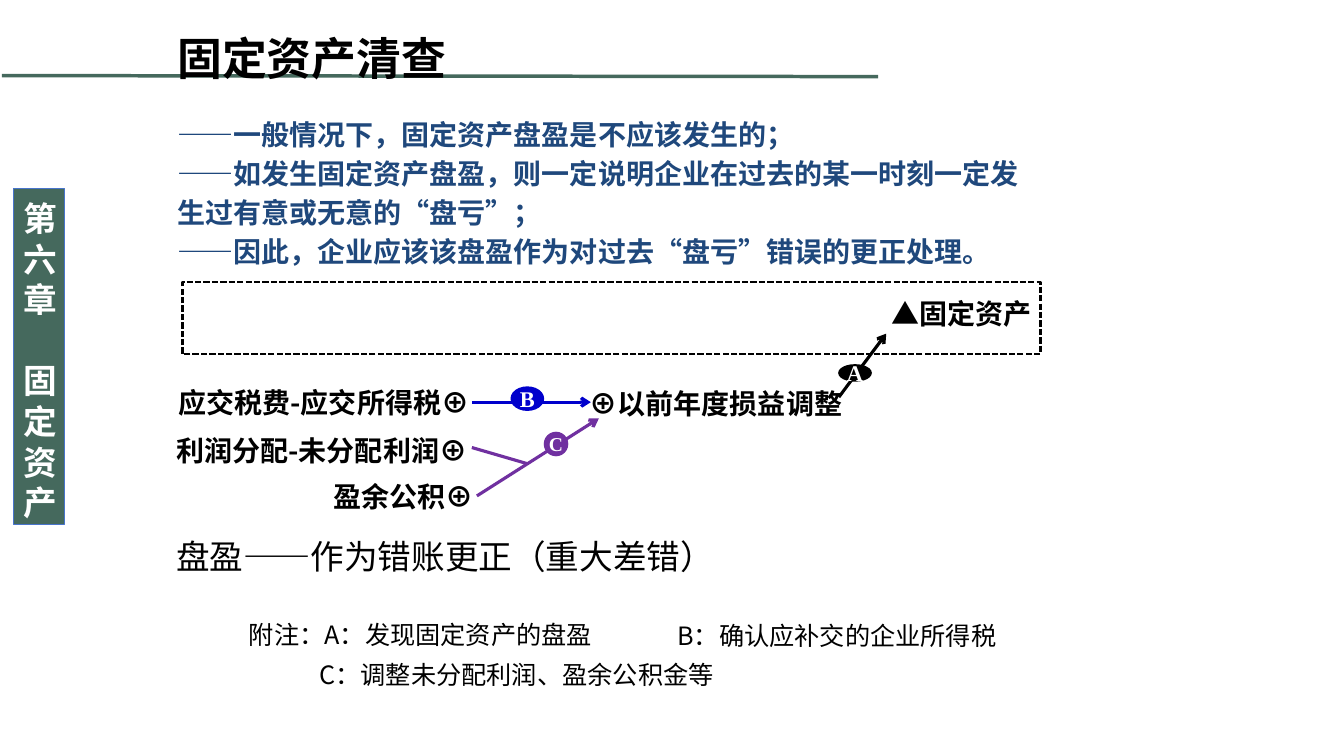
from dataclasses import dataclass

from lxml import etree
from pptx import Presentation
from pptx.dml.color import RGBColor
from pptx.enum.dml import MSO_LINE
from pptx.enum.shapes import MSO_CONNECTOR, MSO_SHAPE
from pptx.enum.text import MSO_ANCHOR, PP_ALIGN
from pptx.oxml.ns import qn
from pptx.util import Inches, Pt

STRAIGHT = MSO_CONNECTOR.STRAIGHT
RECTANGLE = MSO_SHAPE.RECTANGLE
PARALLELOGRAM = MSO_SHAPE.PARALLELOGRAM
BADGE = MSO_SHAPE.FLOWCHART_CONNECTOR
DASHED = MSO_LINE.SQUARE_DOT
MIDDLE = MSO_ANCHOR.MIDDLE
CENTER = PP_ALIGN.CENTER


@dataclass(frozen=True)
class Theme:
    black: str = "000000"
    white: str = "FFFFFF"
    green: str = "45695D"
    edge: str = "4874CB"
    navy: str = "1F487C"
    blue: str = "0000CC"
    purple: str = "7030A0"
    cjk: str = "Noto Sans CJK SC"
    serif: str = "Times New Roman"
    title: int = 32
    heading: int = 24
    account: int = 20
    note: int = 18
    badge: int = 16
    small_badge: int = 14
    leading: float = 1.27


THEME = Theme()


@dataclass(frozen=True)
class Text:
    lines: tuple[str, ...]
    left: float
    top: float
    width: float
    height: float
    size: int = THEME.account
    bold: bool = True
    color: str = THEME.black
    leading: float = THEME.leading


@dataclass(frozen=True)
class Line:
    start: tuple[float, float]
    end: tuple[float, float]
    color: str
    weight: float = 2.25
    arrow: bool = True


@dataclass(frozen=True)
class Badge:
    letter: str
    left: float
    top: float
    width: float
    height: float
    color: str
    size: int = THEME.badge


RULE = Line((0.02, 0.75), (8.71, 0.76), THEME.green, 2.5, False)
CHAPTER = ("第六章", "固定资产")

TEXTS = (
    Text(("盘盈——作为错账更正（重大差错）",), 1.65, 5.3, 11.5, 1.64,
         THEME.heading, False, leading=1.1),
    Text(("⊕以前年度损益调整",), 5.75, 3.77, 2.82, 0.44),
    Text(("应交税费-应交所得税⊕",), 1.67, 3.76, 3.23, 0.44),
    Text(("▲固定资产",), 8.74, 2.87, 1.65, 0.44),
    Text(("利润分配-未分配利润⊕",), 1.65, 4.23, 3.23, 0.44),
    Text(("盈余公积⊕",), 3.21, 4.69, 1.72, 0.44),
    Text(("附注：A：发现固定资产的盘盈",), 2.37, 6.08, 4.41, 0.4, THEME.note, False),
    Text(("B：确认应补交的企业所得税",), 6.62, 6.09, 3.9, 0.4, THEME.note, False),
    Text(("C：调整未分配利润、盈余公积金等",), 3.07, 6.47, 4.69, 0.4, THEME.note, False),
    Text(("——一般情况下，固定资产盘盈是不应该发生的；",
          "——如发生固定资产盘盈，则一定说明企业在过去的某一时刻一定发生过有意或无意的“盘亏”；",
          "——因此，企业应该该盘盈作为对过去“盘亏”错误的更正处理。"),
         1.66, 1.06, 8.66, 1.67, color=THEME.navy, leading=1.4),
    Text(("固定资产清查",), 1.66, 0.23, 7.14, 0.64, THEME.title),
)

ENTRIES = (
    Line((8.32, 3.94), (8.79, 3.31), THEME.black),
    Line((4.68, 3.99), (5.86, 3.99), THEME.blue),
    Line((4.73, 4.92), (5.94, 4.15), THEME.purple),
    Line((4.68, 4.44), (5.23, 4.6), THEME.purple, arrow=False),
)

BADGES = (
    Badge("C", 5.4, 4.29, 0.23, 0.23, THEME.purple, THEME.small_badge),
    Badge("B", 5.07, 3.84, 0.32, 0.23, THEME.blue),
    Badge("A", 8.32, 3.62, 0.32, 0.16, THEME.black),
)


def rgb(color: str) -> RGBColor:
    return RGBColor.from_string(color)


def add_run(paragraph, words: str, size: int, color: str, bold: bool, face: str):
    run = paragraph.add_run()
    run.text = words
    font = run.font
    font.size, font.bold, font.name = Pt(size), bold, face
    font.color.rgb = rgb(color)
    etree.SubElement(run.font._element, qn("a:ea")).set("typeface", face)
    return run


def add_paragraph(frame, index: int):
    return frame.add_paragraph() if index else frame.paragraphs[0]


def add_outlined(slide, kind, box: tuple[float, ...], fill: str, edge: str, weight: float):
    shape = slide.shapes.add_shape(kind, *map(Inches, box))
    shape.shadow.inherit = False
    shape.fill.solid()
    shape.fill.fore_color.rgb = rgb(fill)
    shape.line.color.rgb = rgb(edge)
    shape.line.width = Pt(weight)
    return shape


def add_text(slide, text: Text) -> None:
    box = slide.shapes.add_textbox(*map(Inches, (text.left, text.top, text.width, text.height)))
    frame = box.text_frame
    frame.word_wrap = True
    for index, words in enumerate(text.lines):
        paragraph = add_paragraph(frame, index)
        paragraph.line_spacing = Pt(round(text.size * text.leading, 1))
        add_run(paragraph, words, text.size, text.color, text.bold, THEME.cjk)


def add_line(slide, line: Line) -> None:
    connector = slide.shapes.add_connector(
        STRAIGHT, *map(Inches, (*line.start, *line.end)))
    connector.line.color.rgb = rgb(line.color)
    connector.line.width = Pt(line.weight)
    if line.arrow:
        tail = etree.SubElement(connector.line._get_or_add_ln(), qn("a:tailEnd"))
        tail.set("type", "arrow")
    etree.SubElement(connector._element.spPr, qn("a:effectLst"))


def add_badge(slide, badge: Badge) -> None:
    box = (badge.left, badge.top, badge.width, badge.height)
    shape = add_outlined(slide, BADGE, box, badge.color, badge.color, 1)
    frame = shape.text_frame
    frame.margin_left = frame.margin_right = frame.margin_top = frame.margin_bottom = 0
    frame.vertical_anchor = MIDDLE
    frame.word_wrap = False
    paragraph = frame.paragraphs[0]
    paragraph.alignment = CENTER
    add_run(paragraph, badge.letter, badge.size, THEME.white, True, THEME.serif)


def add_chapter_tab(slide) -> None:
    """Narrow side tab, one character wide, so the chapter name reads downwards."""
    tab = add_outlined(slide, RECTANGLE, (0.13, 1.87, 0.51, 3.33),
                       THEME.green, THEME.edge, 0.75)
    frame = tab.text_frame
    frame.word_wrap = True
    frame.vertical_anchor = MSO_ANCHOR.TOP
    frame.margin_top = Inches(0.09)
    frame.margin_bottom = 0
    pitch = Pt(29)
    for index, words in enumerate(CHAPTER):
        paragraph = add_paragraph(frame, index)
        paragraph.alignment = PP_ALIGN.LEFT
        paragraph.line_spacing = pitch
        if index:
            paragraph.space_before = pitch
        run = add_run(paragraph, words, THEME.heading, THEME.white, True, THEME.cjk)
        run.font._element.set("spc", "-10")


def main() -> None:
    deck = Presentation()
    deck.slide_width, deck.slide_height = Inches(13.33), Inches(7.5)
    slide = deck.slides.add_slide(deck.slide_layouts[6])
    add_line(slide, RULE)
    add_chapter_tab(slide)
    asset_frame = add_outlined(slide, PARALLELOGRAM, (1.81, 2.8, 8.51, 0.71),
                               THEME.white, THEME.black, 1.5)
    asset_frame.adjustments[0] = 0
    asset_frame.line.dash_style = DASHED
    for text in TEXTS:
        add_text(slide, text)
    for entry in ENTRIES:
        add_line(slide, entry)
    for badge in BADGES:
        add_badge(slide, badge)
    deck.save("out.pptx")


if __name__ == "__main__":
    main()
